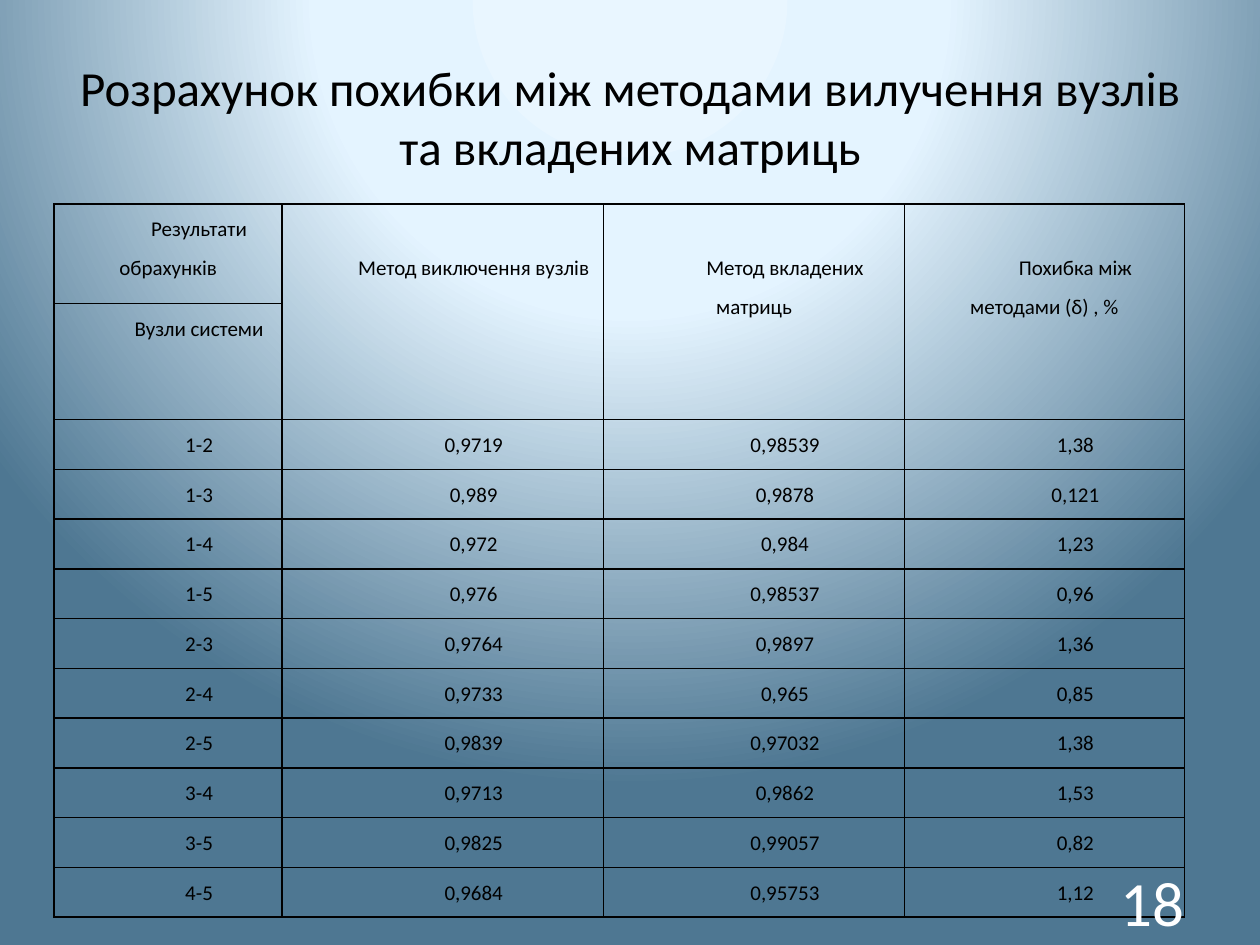
from pptx import Presentation as Deck
from pptx.dml.color import RGBColor as RGB
from pptx.enum.text import MSO_ANCHOR as Anchor, PP_ALIGN as Align
from pptx.oxml import parse_xml as to_xml
from pptx.oxml.ns import nsdecls, qn
from pptx.util import Inches, Pt

BLACK = RGB(0, 0, 0)
WHITE = RGB(255, 255, 255)
GLOW = [(0, RGB(0xE9, 0xF6, 0xFF)), (40, RGB(0xE4, 0xF4, 0xFF)),
        (100, RGB(0x4E, 0x77, 0x92))]

TITLE = "Розрахунок похибки між методами вилучення вузлів та вкладених матриць"
HEADS = ["Результати обрахунків", "Метод виключення вузлів",
         "Метод вкладених матриць", "Похибка між методами (δ) , %"]
NODES = "Вузли системи"
DATA = [
    ("1-2", "0,9719", "0,98539", "1,38"),
    ("1-3", "0,989", "0,9878", "0,121"),
    ("1-4", "0,972", "0,984", "1,23"),
    ("1-5", "0,976", "0,98537", "0,96"),
    ("2-3", "0,9764", "0,9897", "1,36"),
    ("2-4", "0,9733", "0,965", "0,85"),
    ("2-5", "0,9839", "0,97032", "1,38"),
    ("3-4", "0,9713", "0,9862", "1,53"),
    ("3-5", "0,9825", "0,99057", "0,82"),
    ("4-5", "0,9684", "0,95753", "1,12"),
]


class Page:
    """A title-only slide on a grid of 20 columns by 15 rows."""
    font = "Calibri"
    pad = Inches(0.07)
    indent = Inches(0.49)

    def __init__(self, deck):
        self.slide = deck.slides.add_slide(deck.slide_layouts[5])
        self.col = deck.slide_width / 20
        self.row = deck.slide_height / 15

    def box(self, x, y, w, h):
        return (int(x * self.col), int(y * self.row),
                int(w * self.col), int(h * self.row))

    def text(self, frame, words, size, color, align):
        para = frame.paragraphs[0]
        para.alignment = align
        run = para.add_run()
        run.text = words
        run.font.name = self.font
        run.font.size = Pt(size)
        run.font.color.rgb = color
        return para

    def back(self, stops):
        marks = "".join(f'<a:gs pos="{at * 1000}"><a:srgbClr val="{color}"/></a:gs>'
                        for at, color in stops)
        self.slide.element.find(qn("p:cSld")).insert(0, to_xml(
            f'<p:bg {nsdecls("p", "a")}><p:bgPr><a:gradFill rotWithShape="1">'
            f'<a:gsLst>{marks}</a:gsLst><a:path path="circle">'
            '<a:fillToRect l="50000" t="-80000" r="50000" b="180000"/></a:path>'
            '</a:gradFill><a:effectLst/></p:bgPr></p:bg>'))

    def title(self, words, *place):
        head = self.slide.shapes.title
        head.left, head.top, head.width, head.height = self.box(*place)
        head.text_frame.vertical_anchor = Anchor.MIDDLE
        self.text(head.text_frame, words, 28, BLACK, Align.CENTER)

    def label(self, words, *place):
        frame = self.slide.shapes.add_textbox(*self.box(*place)).text_frame
        frame.word_wrap = True
        frame.vertical_anchor = Anchor.MIDDLE
        self.text(frame, words, 36, WHITE, Align.RIGHT)

    def table(self, x, y, cols, rows):
        place = self.box(x, y, sum(cols), sum(rows))
        grid = self.slide.shapes.add_table(len(rows), len(cols), *place).table
        grid.first_row = grid.horz_banding = False
        for part, size in zip(grid.columns, cols):
            part.width = int(size * self.col)
        for part, size in zip(grid.rows, rows):
            part.height = int(size * self.row)
        for cell in grid.iter_cells():
            self.frame(cell)
        return grid

    def frame(self, cell):
        cell.fill.background()
        cell.margin_left = cell.margin_right = self.pad
        cell.margin_top = cell.margin_bottom = 0
        props = cell._tc.get_or_add_tcPr()
        for spot, side in enumerate("LRTB"):
            props.insert(spot, to_xml(
                f'<a:ln{side} {nsdecls("a")} w="12700"><a:solidFill>'
                f'<a:srgbClr val="{BLACK}"/></a:solidFill></a:ln{side}>'))

    def fill(self, cell, words):
        para = self.text(cell.text_frame, words, 12, BLACK, Align.CENTER)
        para.line_spacing = 1.5
        props = para._p.get_or_add_pPr()
        props.set("marL", "0")
        props.set("indent", str(int(self.indent)))


def main():
    deck = Deck()
    deck.slide_width, deck.slide_height = Inches(10), Inches(7.5)
    page = Page(deck)
    page.back(GLOW)
    page.title(TITLE, 1, 0.6, 18, 2.5)

    # Table: two header rows, then one row per pair of nodes
    grid = page.table(0.86, 3.24, [3.62, 5.1, 4.78, 4.44],
                      [1.58] * 2 + [0.79] * len(DATA))
    for c, words in enumerate(HEADS):
        cell = grid.cell(0, c)
        page.fill(cell, words)
        if c:
            cell.merge(grid.cell(1, c))
            cell.margin_top = Inches(0.31)  # one line down
    page.fill(grid.cell(1, 0), NODES)
    for r, line in enumerate(DATA, 2):
        for c, words in enumerate(line):
            page.fill(grid.cell(r, c), words)

    # Page number
    page.label("18", 14.34, 13.9, 4.66, 0.8)
    deck.save("out.pptx")


if __name__ == "__main__":
    main()
